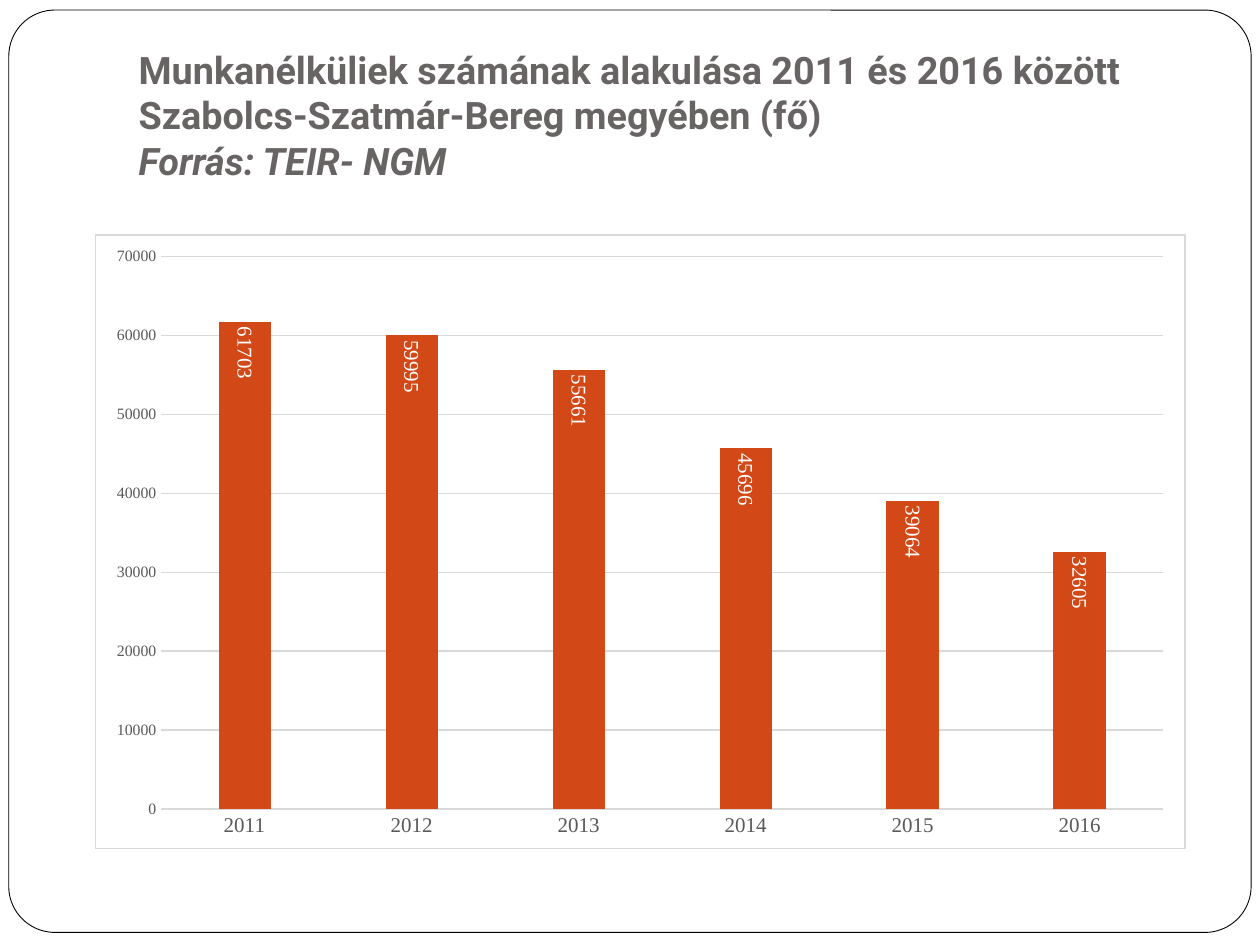
from lxml import etree
from pptx import Presentation
from pptx.chart.data import CategoryChartData
from pptx.dml.color import RGBColor
from pptx.enum.chart import XL_CHART_TYPE as CT, XL_LABEL_POSITION as LP, XL_TICK_MARK as TM
from pptx.enum.shapes import MSO_SHAPE as SHAPE
from pptx.enum.text import MSO_ANCHOR as ANCHOR, MSO_AUTO_SIZE as AUTO, PP_ALIGN as ALIGN
from pptx.oxml import parse_xml
from pptx.oxml.ns import nsdecls, qn
from pptx.util import Inches, Pt

COLORS = {"white": "FFFFFF", "black": "000000", "title": "696464",
          "axis": "595959", "grid": "D9D9D9", "bar": "D34817"}
TITLE_FONT, CHART_FONT = "Roboto", "Times New Roman"

UNEMPLOYED = {"2011": 61703, "2012": 59995, "2013": 55661,
              "2014": 45696, "2015": 39064, "2016": 32605}


def rgb(name):
    return RGBColor.from_string(COLORS[name])


def format_font(font, size, color, name=CHART_FONT, bold=False, italic=False):
    font.size, font.name = Pt(size), name
    font.bold, font.italic = bold, italic
    font.color.rgb = rgb(color)


def add_text(p, text, **style):
    r = p.add_run()
    r.text = text
    format_font(r.font, **style)


def format_line(line, color, width):
    line.color.rgb = rgb(color)
    line.width = Pt(width)


class SlideBuilder:
    def __init__(self, prs):
        self.s = prs.slides.add_slide(prs.slide_layouts[5])
        self.title_style = dict(size=21.6, color="title", name=TITLE_FONT, bold=True)

    def frame(self, x, y, w, h):
        sp = self.s.shapes.add_shape(SHAPE.ROUNDED_RECTANGLE, Inches(x), Inches(y),
                                     Inches(w), Inches(h))
        sp.adjustments[0] = 0.05
        sp.shadow.inherit = False
        sp.fill.solid()
        sp.fill.fore_color.rgb = rgb("white")
        format_line(sp.line, "black", 0.5)

    def title(self, text, source, x, y, w, h):
        sp = self.s.shapes.title
        sp.left, sp.top, sp.width, sp.height = (Inches(v) for v in (x, y, w, h))
        sp.element.getparent().append(sp.element)  # bring in front of the frame
        tf = sp.text_frame
        tf.word_wrap, tf.auto_size = True, AUTO.NONE
        tf.vertical_anchor = ANCHOR.BOTTOM
        tf.margin_left = tf.margin_right = tf.margin_bottom = Inches(0.1)
        tf.margin_top = Inches(0.05)
        p = tf.paragraphs[0]
        p.alignment = ALIGN.LEFT
        add_text(p, text, **self.title_style)
        p.add_line_break()
        add_text(p, source, italic=True, **self.title_style)

    def column_chart(self, values, x, y, w, h):
        data = CategoryChartData(number_format="0")
        data.categories = list(values)
        data.add_series("Series 1", list(values.values()))
        chart = self.s.shapes.add_chart(CT.COLUMN_CLUSTERED, Inches(x), Inches(y),
                                        Inches(w), Inches(h), data).chart
        chart.has_legend = chart.has_title = False
        format_font(chart.font, 10, "black")
        self.chart_area(chart)

        # Axes
        cat, val = chart.category_axis, chart.value_axis
        for axis, size in ((cat, 12), (val, 9)):
            axis.major_tick_mark = axis.minor_tick_mark = TM.NONE
            format_font(axis.tick_labels.font, size, "axis")
        format_line(cat.format.line, "grid", 0.75)
        val.format.line.fill.background()
        val.minimum_scale, val.maximum_scale, val.major_unit = 0, 70000, 10000
        format_line(val.major_gridlines.format.line, "grid", 0.75)

        # Columns
        plot = chart.plots[0]
        plot.gap_width, plot.overlap, plot.vary_by_categories = 219, -27, False
        fill = plot.series[0].format.fill
        fill.solid()
        fill.fore_color.rgb = rgb("bar")

        # Value labels, turned to read downwards
        labels = plot.series[0].data_labels
        labels.show_value, labels.position = True, LP.INSIDE_END
        format_font(labels.font, 12, "white")
        body = labels._element.find(qn("c:txPr")).find(qn("a:bodyPr"))
        body.set("rot", "5400000")
        body.set("vert", "horz")

    def chart_area(self, chart):
        sp_pr = parse_xml(f'<c:spPr {nsdecls("c", "a")}/>')
        fill = etree.SubElement(sp_pr, qn("a:solidFill"))
        etree.SubElement(fill, qn("a:srgbClr"), val=COLORS["white"])
        line = etree.SubElement(sp_pr, qn("a:ln"), w=str(Pt(0.75)))
        fill = etree.SubElement(line, qn("a:solidFill"))
        etree.SubElement(fill, qn("a:srgbClr"), val=COLORS["grid"])
        chart._chartSpace.find(qn("c:chart")).addnext(sp_pr)


def main():
    prs = Presentation()
    prs.slide_width, prs.slide_height = Inches(10), Inches(7.5)
    b = SlideBuilder(prs)
    b.frame(0.07, 0.08, 9.86, 7.32)
    b.title("Munkanélküliek számának alakulása 2011 és 2016 között "
            "Szabolcs-Szatmár-Bereg megyében (fő)",
            "Forrás: TEIR- NGM", 1, 0.3, 8.5, 1.25)
    b.column_chart(UNEMPLOYED, 0.75, 1.86, 8.66, 4.88)
    prs.save("out.pptx")


if __name__ == "__main__":
    main()
